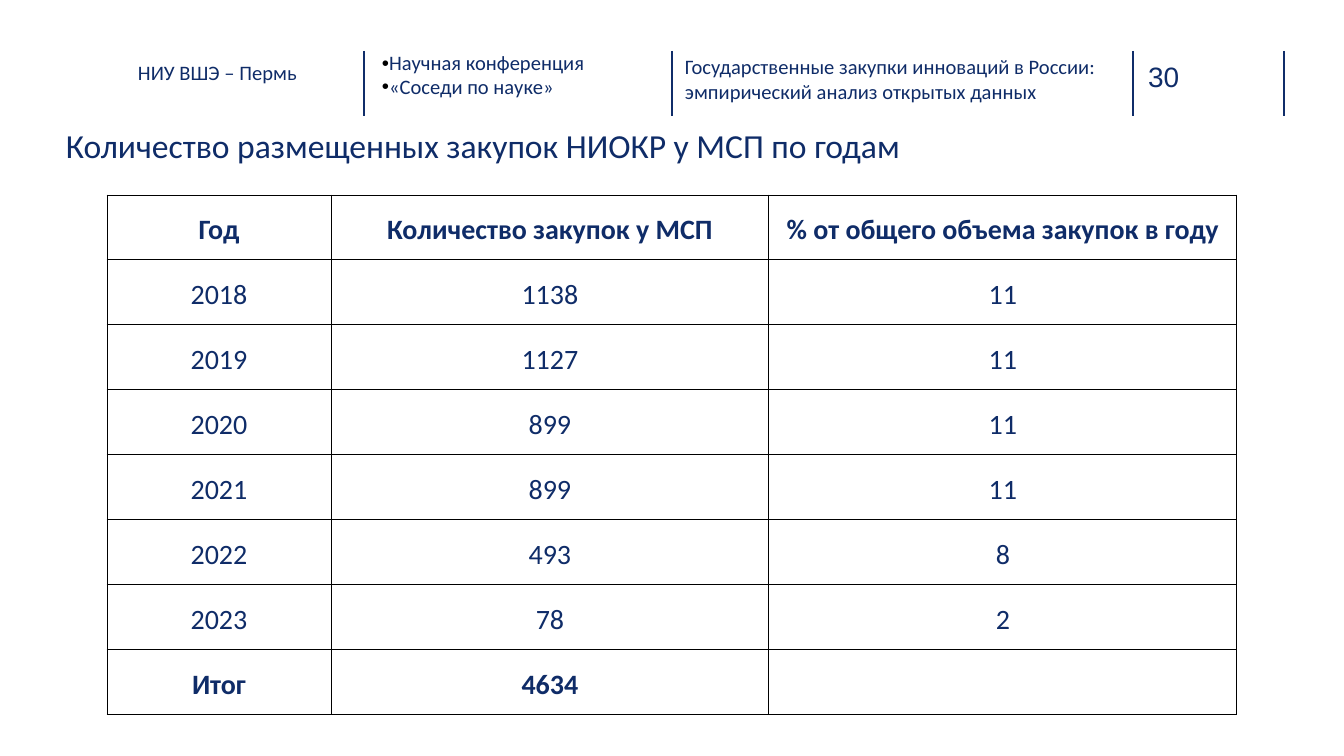
"""Build the slide on yearly R&D purchases from small firms."""
import pptx
import pptx.dml.color
import pptx.enum.shapes
import pptx.enum.text
import pptx.oxml
import pptx.oxml.ns
import pptx.util
import lxml.etree

SCALE = 914400 / 134.4
NAVY = "0F2C68"
NS = pptx.oxml.ns.nsdecls("a")


def px(size):
    return pptx.util.Emu(round(size * SCALE))


def style(part, size, name="Calibri", color=NAVY, bold=False):
    for run in part.runs:
        run.font.size = pptx.util.Pt(size)
        run.font.name = name
        run.font.bold = bold
        run.font.color.rgb = pptx.dml.color.RGBColor.from_string(color)


deck = pptx.Presentation()
deck.slide_width = px(1344)
deck.slide_height = px(756)
slide = deck.slides.add_slide(deck.slide_layouts[6])

for x in (364, 672, 1133, 1284):
    rule = slide.shapes.add_connector(
        pptx.enum.shapes.MSO_CONNECTOR.STRAIGHT, px(x), px(51), px(x), px(116))
    rule.line.color.rgb = pptx.dml.color.RGBColor.from_string("102D69")
    rule.line.width = pptx.util.Pt(1)
    lxml.etree.SubElement(rule._element.spPr, pptx.oxml.ns.qn("a:effectLst"))

texts = [
    ((138, 60, 175, 51), (0, 0), 11, "Calibri", NAVY, "НИУ ВШЭ – Пермь"),
    ((372, 47, 278, 60), (10, 5), 11, "Calibri", NAVY,
     "Научная конференция\n«Соседи по науке»"),
    ((672, 47, 450, 63), (13, 7), 11, "Calibri", NAVY,
     "Государственные закупки инноваций в России:\nэмпирический анализ открытых данных"),
    ((1148, 60, 74, 34), (0, 0), 15, "Arial", "102D69", "30"),
    ((65, 124, 1149, 42), (1, 1), 18, "Calibri", NAVY,
     "Количество размещенных закупок НИОКР у МСП по годам"),
]
boxes = []
for place, (side, top), size, name, color, words in texts:
    box = slide.shapes.add_textbox(*map(px, place))
    frame = box.text_frame
    frame.word_wrap = True
    frame.margin_left = frame.margin_right = px(side)
    frame.margin_top = frame.margin_bottom = px(top)
    frame.text = words
    for para in frame.paragraphs:
        style(para, size, name, color)
    boxes.append(box)

for para in boxes[1].text_frame.paragraphs:
    para.line_spacing = 0.96
    props = para._p.get_or_add_pPr()
    props.set("marL", "0")
    props.set("indent", "0")
    for xml in (f'<a:buClr {NS}><a:srgbClr val="000000"/></a:buClr>',
                f'<a:buFont {NS} typeface="Arial"/>',
                f'<a:buChar {NS} char="•"/>'):
        props.append(pptx.oxml.parse_xml(xml))

rows = [
    ("Год", "Количество закупок у МСП", "% от общего объема закупок в году"),
    ("2018", "1138", "11"),
    ("2019", "1127", "11"),
    ("2020", "899", "11"),
    ("2021", "899", "11"),
    ("2022", "493", "8"),
    ("2023", "78", "2"),
    ("Итог", "4634", ""),
]
grid = slide.shapes.add_table(len(rows), 3, px(107), px(195), px(1130), px(524)).table
for col, width in zip(grid.columns, (224, 438, 468)):
    col.width = px(width)
for r, row in enumerate(rows):
    grid.rows[r].height = px(65)
    for c, words in enumerate(row):
        cell = grid.cell(r, c)
        cell.fill.background()
        cell.margin_left = cell.margin_right = px(9)
        cell.margin_top = cell.margin_bottom = px(13)
        cell.text = words
        para = cell.text_frame.paragraphs[0]
        para.alignment = pptx.enum.text.PP_ALIGN.CENTER
        para.line_spacing = 1.15
        style(para, 15, bold=r in (0, len(rows) - 1))
        if not words:
            para._p.append(pptx.oxml.parse_xml(f'<a:endParaRPr {NS} sz="1500"/>'))
        props = cell._tc.get_or_add_tcPr()
        for i, side in enumerate("LRTB"):
            props.insert(i, pptx.oxml.parse_xml(
                f'<a:ln{side} {NS} w="7620"><a:solidFill>'
                f'<a:srgbClr val="000000"/></a:solidFill></a:ln{side}>'))

deck.save("out.pptx")
